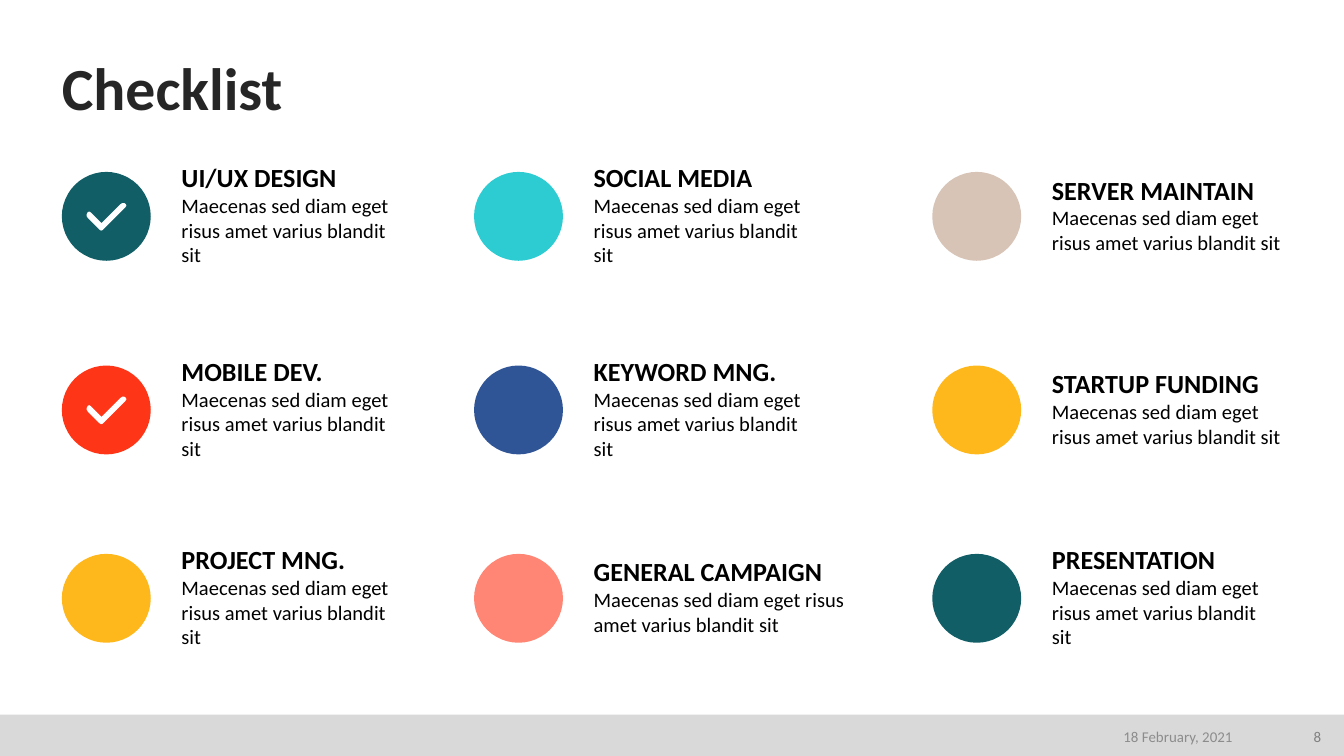
from pptx import Presentation
from pptx.dml.color import RGBColor
from pptx.enum.shapes import MSO_SHAPE
from pptx.enum.text import MSO_ANCHOR, PP_ALIGN
from pptx.util import Cm, Pt

COLORS = {
    "teal": "115E67", "cyan": "2DCCD3", "sand": "D7C4B7",
    "red": "FF3517", "blue": "305597", "yellow": "FFB81C", "coral": "FF8674",
    "black": "000000", "title": "262626", "white": "FFFFFF",
    "band": "D9D9D9", "date": "8C8C8C", "number": "808080",
}
FONT = "Calibri"
DESCRIPTION = "Maecenas sed diam eget risus amet varius blandit sit"
CIRCLE_SIZE = 1.68
TEXT_OFFSET = 2.26
COLUMN_LEFTS = [1.17, 8.96, 17.62]
ROW_TOPS = [3.25, 6.91, 10.47]
CHECK_POINTS = [
    (73, 8), (32, 49), (30, 51), (27, 52), (24, 50), (2, 28), (0, 25),
    (0, 21), (2, 17), (5, 16), (8, 18), (28, 38), (64, 2), (67, 0),
    (71, 0), (74, 2), (75, 5),
]
ITEMS = [
    [("UI/UX DESIGN", "teal", 4.27, True),
     ("SOCIAL MEDIA", "cyan", 4.27, False),
     ("SERVER MAINTAIN", "sand", 4.57, False)],
    [("MOBILE DEV.", "red", 4.27, True),
     ("KEYWORD MNG.", "blue", 4.27, False),
     ("STARTUP FUNDING", "yellow", 4.57, False)],
    [("PROJECT MNG.", "yellow", 4.27, False),
     ("GENERAL CAMPAIGN", "coral", 5.1, False),
     ("PRESENTATION", "teal", 4.27, False)],
]


class ChecklistSlide:
    def __init__(self, slide):
        self.slide = slide

    def paint(self, shape, color):
        shape.shadow.inherit = False
        shape.fill.solid()
        shape.fill.fore_color.rgb = RGBColor.from_string(COLORS[color])
        shape.line.fill.background()

    def shape(self, kind, left, top, width, height, color):
        shape = self.slide.shapes.add_shape(
            kind, Cm(left), Cm(top), Cm(width), Cm(height))
        self.paint(shape, color)

    def check(self, left, top):
        builder = self.slide.shapes.build_freeform(
            *CHECK_POINTS[0], scale=Cm(0.01))
        builder.add_line_segments(CHECK_POINTS[1:], close=True)
        self.paint(builder.convert_to_shape(Cm(left), Cm(top)), "white")

    def text(self, left, top, width, height, lines, color,
             anchor=MSO_ANCHOR.MIDDLE, align=PP_ALIGN.LEFT, inset=0, spacing=1.0):
        frame = self.slide.shapes.add_textbox(
            Cm(left), Cm(top), Cm(width), Cm(height)).text_frame
        frame.word_wrap = True
        frame.vertical_anchor = anchor
        frame.margin_left = frame.margin_right = Cm(inset)
        frame.margin_top = frame.margin_bottom = Cm(inset / 2)
        frame.text = "\n".join(line for line, _, _ in lines)
        for paragraph, (_, size, bold) in zip(frame.paragraphs, lines):
            paragraph.alignment = align
            paragraph.line_spacing = spacing
            paragraph.font.name = FONT
            paragraph.font.size = Pt(size)
            paragraph.font.bold = bold
            paragraph.font.color.rgb = RGBColor.from_string(COLORS[color])

    def item(self, left, top, heading, color, width, done):
        self.shape(MSO_SHAPE.OVAL, left, top, CIRCLE_SIZE, CIRCLE_SIZE, color)
        if done:
            self.check(left + 0.47, top + 0.59)
        self.text(left + TEXT_OFFSET, top, width, 1.6,
                  [(heading, 14, True), (DESCRIPTION, 11, False)], "black")

    def footer(self, left, width, line, color):
        self.text(left, 13.59, width, 0.66, [(line, 8, False)], color,
                  align=PP_ALIGN.RIGHT, inset=0.25)


def main():
    presentation = Presentation()
    presentation.slide_width = Cm(25.4)
    presentation.slide_height = Cm(14.29)
    checklist = ChecklistSlide(
        presentation.slides.add_slide(presentation.slide_layouts[6]))

    checklist.shape(MSO_SHAPE.RECTANGLE, 0, 13.51, 25.4, 0.78, "band")
    checklist.text(1.17, 1.02, 23.11, 1.32, [("Checklist", 32, True)], "title",
                   anchor=MSO_ANCHOR.BOTTOM, spacing=0.9)
    for top, row in zip(ROW_TOPS, ITEMS):
        for left, item in zip(COLUMN_LEFTS, row):
            checklist.item(left, top, *item)
    checklist.footer(17.83, 5.72, "18 February, 2021", "date")
    checklist.footer(24.28, 0.94, "8", "number")

    presentation.save("out.pptx")


if __name__ == "__main__":
    main()
